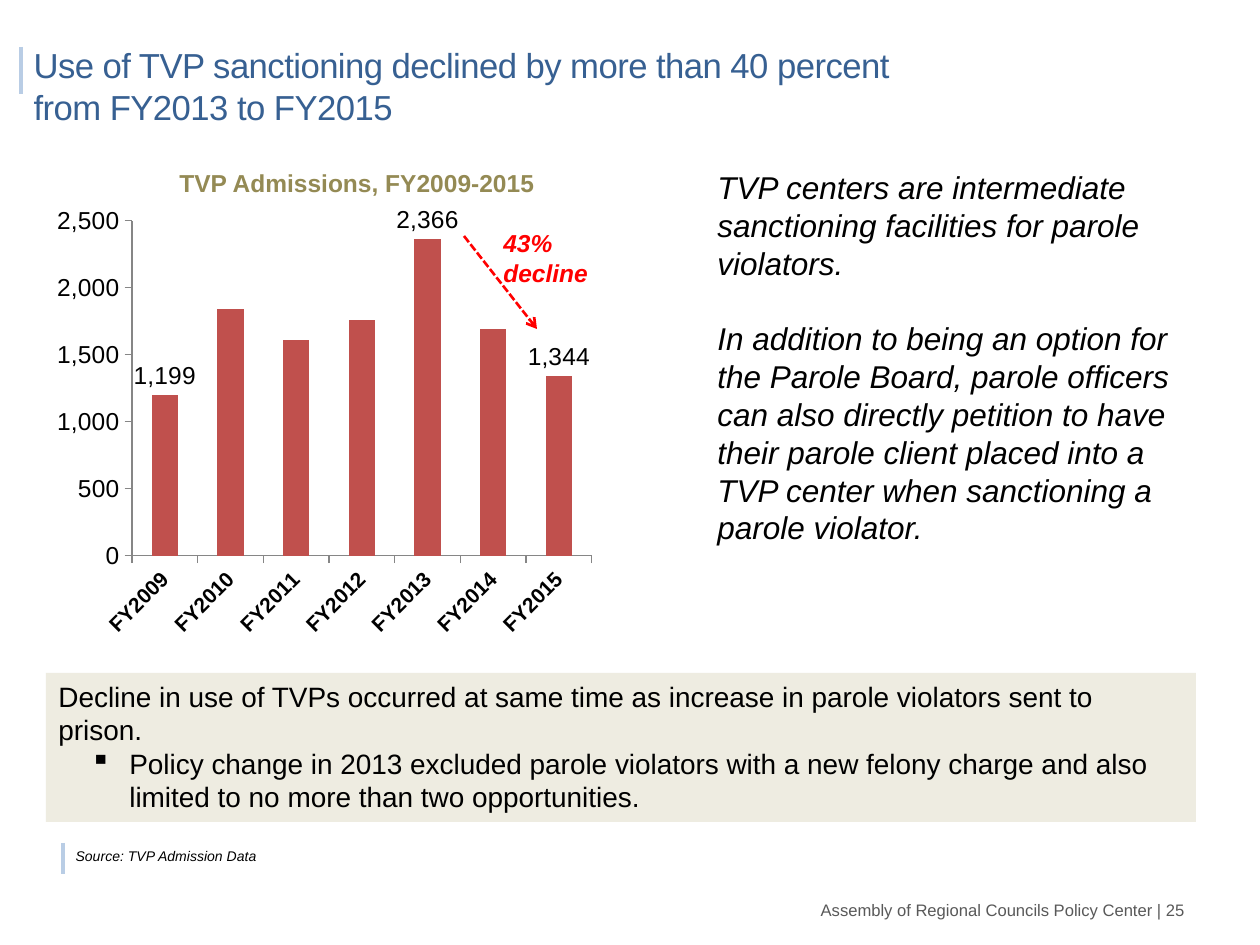
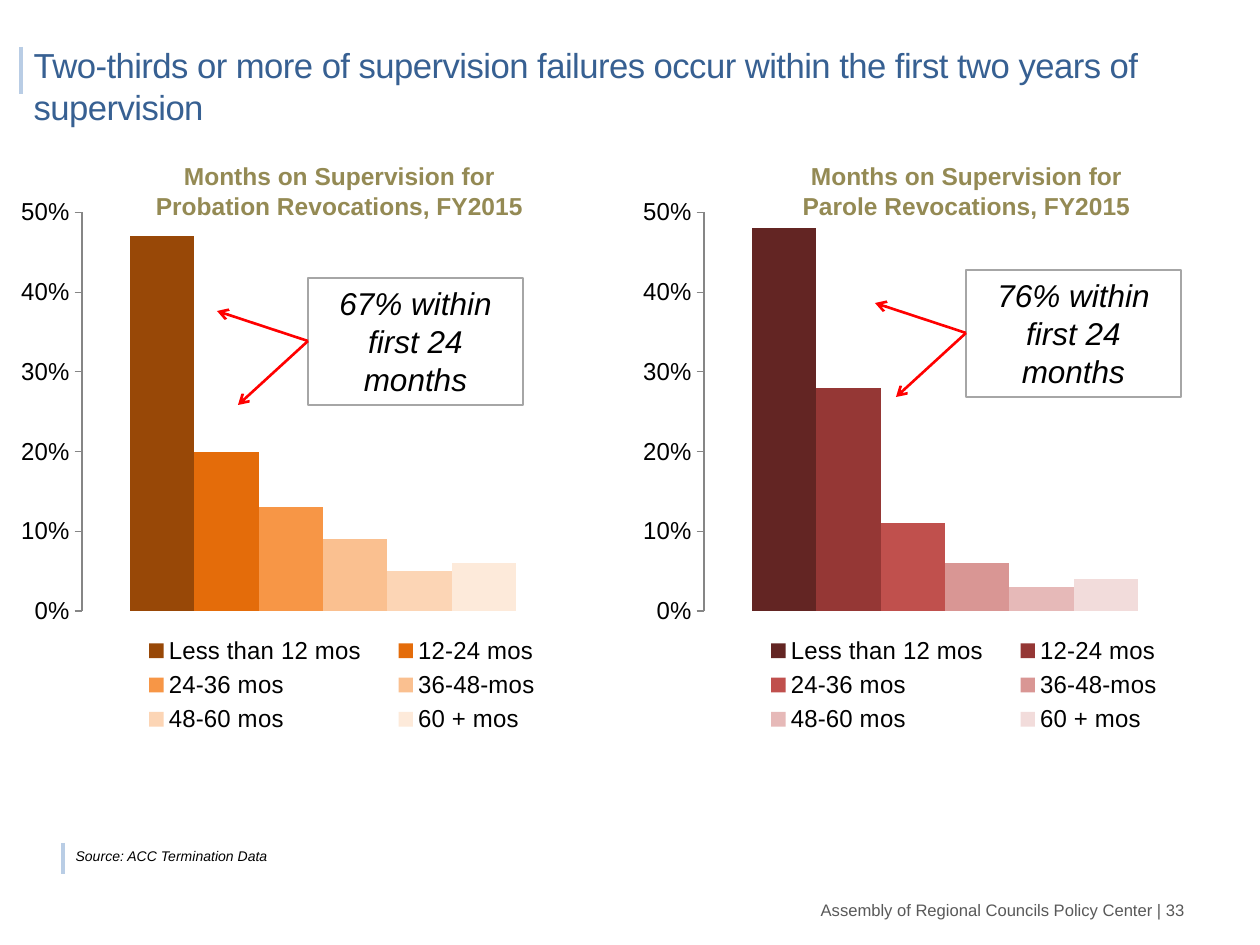
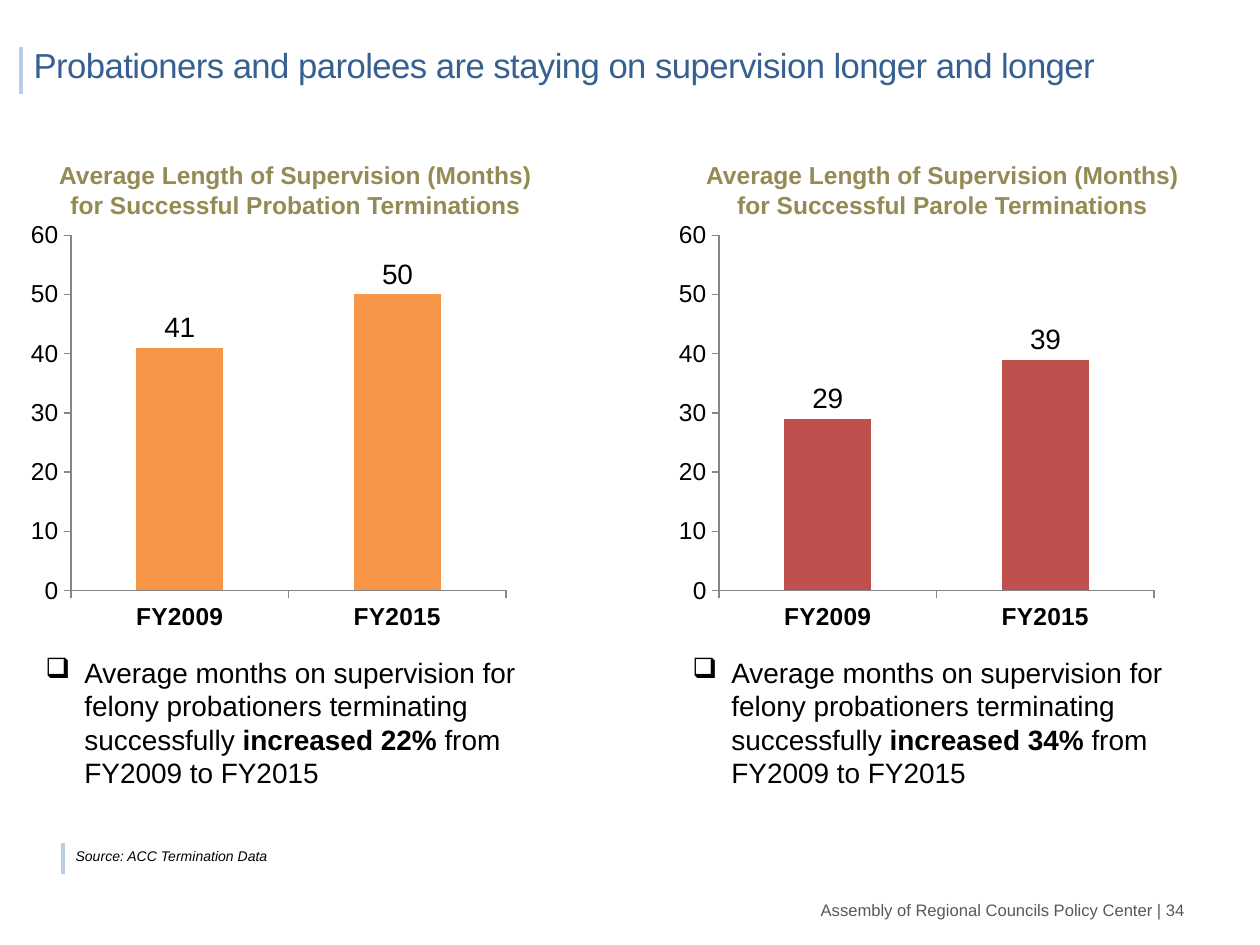
from dataclasses import dataclass

from lxml import etree
from pptx import Presentation
from pptx.chart.data import CategoryChartData
from pptx.dml.color import RGBColor
from pptx.enum.chart import XL_CHART_TYPE, XL_LABEL_POSITION, XL_LEGEND_POSITION, XL_TICK_MARK
from pptx.enum.dml import MSO_LINE
from pptx.enum.shapes import MSO_CONNECTOR, MSO_SHAPE
from pptx.enum.text import MSO_ANCHOR, MSO_AUTO_SIZE, PP_ALIGN
from pptx.oxml.ns import qn
from pptx.util import Emu, Pt

PX = 914400 / 126
COLUMN = XL_CHART_TYPE.COLUMN_CLUSTERED
OUTSIDE_END = XL_LABEL_POSITION.OUTSIDE_END
OUTSIDE = XL_TICK_MARK.OUTSIDE
LEGEND_BOTTOM = XL_LEGEND_POSITION.BOTTOM
SHORT_DASH = MSO_LINE.SQUARE_DOT
STRAIGHT = MSO_CONNECTOR.STRAIGHT
RECTANGLE = MSO_SHAPE.RECTANGLE
TOP, BOTTOM = MSO_ANCHOR.TOP, MSO_ANCHOR.BOTTOM
NO_FIT = MSO_AUTO_SIZE.NONE
LEFT, CENTER, RIGHT = PP_ALIGN.LEFT, PP_ALIGN.CENTER, PP_ALIGN.RIGHT


@dataclass(frozen=True)
class Theme:
    """Colours, font and type sizes shared by every slide."""
    font: str = "Arial"
    title: str = "376092"
    heading: str = "948A54"
    text: str = "000000"
    footer: str = "595959"
    rail: str = "B9CDE5"
    accent: str = "FF0000"
    panel: str = "EEECE1"
    border: str = "A6A6A6"
    axis: str = "868686"
    probation: str = "F79646"
    parole: str = "C0504D"
    probation_shades: tuple = ("984807", "E46C0A", "F79646", "FAC090", "FCD5B5", "FDEADA")
    parole_shades: tuple = ("632523", "953735", "C0504D", "D99694", "E6B9B8", "F2DCDB")
    title_size: float = 19.8
    lead_size: int = 18
    body_size: int = 16
    label_size: int = 14
    small_label_size: int = 12
    footer_size: float = 9.5
    source_size: int = 8


THEME = Theme()
DURATIONS = ("Less than 12 mos", "12-24 mos", "24-36 mos", "36-48-mos", "48-60 mos", "60 + mos")


def px(length):
    """Turn pixels into EMU."""
    return Emu(round(length * PX))


def box(left, top, width, height):
    """Turn a pixel box into EMU."""
    return [px(length) for length in (left, top, width, height)]


def rgb(code):
    """Turn a hex code into a colour."""
    return RGBColor.from_string(code)


def style(font, size, color=THEME.text, bold=None, italic=None):
    """Format a font in the theme typeface."""
    font.name = THEME.font
    font.size = Pt(size)
    font.color.rgb = rgb(color)
    font.bold = bold
    font.italic = italic


def write(shape, paragraphs, size, color=THEME.text, bold=None, italic=None,
          align=LEFT, anchor=TOP, gap=0):
    """Fill a shape with uniformly styled paragraphs."""
    frame = shape.text_frame
    frame.word_wrap = True
    frame.auto_size = NO_FIT
    frame.vertical_anchor = anchor
    for index, text in enumerate(paragraphs):
        paragraph = frame.add_paragraph() if index else frame.paragraphs[0]
        paragraph.text = text
        paragraph.alignment = align
        if index and gap:
            paragraph.space_before = Pt(gap)
        style(paragraph.font, size, color, bold, italic)
    return frame.paragraphs


def set_bullet(paragraph, symbol=None, margin=0, hanging=0):
    """Give a paragraph a bullet and a hanging indent, or neither."""
    properties = paragraph._p.get_or_add_pPr()
    properties.set("marL", str(px(margin)))
    properties.set("indent", str(-px(hanging)))
    if symbol:
        bullet = etree.Element(qn("a:buChar"), char=symbol)
    else:
        bullet = etree.Element(qn("a:buNone"))
    defaults = properties.find(qn("a:defRPr"))
    if defaults is None:
        properties.append(bullet)
    else:
        defaults.addprevious(bullet)


def add_text(slide, place, paragraphs, size, **look):
    """Add a wrapped text box."""
    return write(slide.shapes.add_textbox(*box(*place)), paragraphs, size, **look)


def add_heading(slide, place, *lines):
    """Add the heading above a chart."""
    add_text(slide, place, lines, THEME.label_size, color=THEME.heading, bold=True, align=CENTER)


def add_panel(slide, place, fill=None, border=None):
    """Add a flat rectangle."""
    panel = slide.shapes.add_shape(RECTANGLE, *box(*place))
    panel.shadow.inherit = False
    if fill:
        panel.fill.solid()
        panel.fill.fore_color.rgb = rgb(fill)
    else:
        panel.fill.background()
    if border:
        panel.line.color.rgb = rgb(border)
        panel.line.width = Pt(0.75)
    else:
        panel.line.fill.background()
    return panel


def add_line(slide, start, end, color, width):
    """Add a straight line without a shadow."""
    line = slide.shapes.add_connector(STRAIGHT, *box(*start, *end))
    line.line.color.rgb = rgb(color)
    line.line.width = Pt(width)
    etree.SubElement(line.element.spPr, qn("a:effectLst"))
    return line


def add_arrow(slide, start, end, dash=None):
    """Add an accent arrow."""
    arrow = add_line(slide, start, end, THEME.accent, 1.5)
    if dash:
        arrow.line.dash_style = dash
    etree.SubElement(arrow.line._get_or_add_ln(), qn("a:tailEnd"), type="arrow")


def add_rails(slide):
    """Put the title and source rails on the layout."""
    for x, top, bottom in ((21, 47, 94), (63, 843, 874)):
        rail = add_line(slide, (x, top), (x, bottom), THEME.rail, 2)
        slide.slide_layout.shapes.element.append(rail.element)


def add_slide(deck, title, source, number):
    """Add a slide with its title, source and footer."""
    slide = deck.slides.add_slide(deck.slide_layouts[1])
    heading, note = slide.placeholders
    heading.left, heading.top, heading.width, heading.height = box(21, 38, 1176, 94)
    for paragraph in write(heading, [title], THEME.title_size, THEME.title):
        for run in paragraph.runs:
            run.font._element.set("spc", "-30")
    note.left, note.top, note.width, note.height = box(63, 841, 643, 30)
    set_bullet(write(note, [f"Source: {source}"], THEME.source_size, italic=True)[0])
    add_text(slide, (789, 876, 408, 50),
             [f"Assembly of Regional Councils Policy Center | {number}"],
             THEME.footer_size, color=THEME.footer, align=RIGHT, anchor=BOTTOM)
    return slide


def set_layout(parent, index, mode, **fractions):
    """Place a chart part by fractions of the chart area."""
    for old in parent.findall(qn("c:layout")):
        parent.remove(old)
    layout = etree.Element(qn("c:layout"))
    manual = etree.SubElement(layout, qn("c:manualLayout"))
    if mode:
        etree.SubElement(manual, qn("c:layoutTarget"), val=mode)
    for side in ("xMode", "yMode"):
        etree.SubElement(manual, qn(f"c:{side}"), val="edge")
    for key, value in fractions.items():
        etree.SubElement(manual, qn(f"c:{key}"), val=str(value))
    parent.insert(index, layout)


def add_columns(slide, place, categories, series, colors, number_format, top, step):
    """Add a column chart with a plain value axis."""
    data = CategoryChartData(number_format=number_format)
    data.categories = categories
    for name, values in series:
        data.add_series(name, values)
    chart = slide.shapes.add_chart(COLUMN, *box(*place), data).chart
    style(chart.font, THEME.lead_size)
    chart.has_title = False
    chart.has_legend = False
    plot = chart.plots[0]
    plot.vary_by_categories = False
    plot.gap_width = 150
    plot.overlap = 0
    for columns, color in zip(plot.series, colors):
        columns.format.fill.solid()
        columns.format.fill.fore_color.rgb = rgb(color)
    axis = chart.value_axis
    axis.has_major_gridlines = False
    axis.minimum_scale, axis.maximum_scale, axis.major_unit = 0, top, step
    axis.tick_labels.number_format = number_format
    axis.tick_labels.number_format_is_linked = False
    style(axis.tick_labels.font, THEME.label_size)
    for each in (axis, chart.category_axis):
        each.major_tick_mark = OUTSIDE
        each.format.line.color.rgb = rgb(THEME.axis)
    return chart


def add_year_chart(slide, place, values, color, number_format, top, step, year_size,
                   value_size, labelled=None):
    """Add one series by fiscal year, labelling all columns or chosen ones."""
    chart = add_columns(slide, place, list(values), [("Series 1", list(values.values()))],
                        [color], number_format, top, step)
    style(chart.category_axis.tick_labels.font, year_size, bold=True)
    columns = chart.plots[0].series[0]
    labels = columns.data_labels
    labels.show_value = labelled is None
    labels.number_format = number_format
    labels.number_format_is_linked = False
    labels.position = OUTSIDE_END
    style(labels.font, value_size)
    for index, year in enumerate(values):
        if labelled and year in labelled:
            label = columns.points[index].data_label
            style(label.font, value_size)
            label.position = OUTSIDE_END
    return chart


def add_duration_chart(slide, place, shares, shades):
    """Add the shares of revocations by months on supervision."""
    series = [(name, [share]) for name, share in zip(DURATIONS, shares)]
    chart = add_columns(slide, place, ["1"], series, shades, "0%", 0.5, 0.1)
    chart.category_axis.visible = False
    chart.has_legend = True
    legend = chart.legend
    legend.position = LEGEND_BOTTOM
    legend.include_in_layout = False
    style(legend.font, THEME.label_size)
    set_layout(chart.element.chart.plotArea, 0, "inner", x=0.09, y=0.08, w=0.89, h=0.62)
    set_layout(legend._element, 1, None, x=0.16, y=0.73, w=0.82, h=0.17)


def add_callout(slide, left, top, text):
    """Add a boxed remark with two arrows to the first two columns."""
    callout = add_panel(slide, (left, top, 215, 127), border=THEME.border)
    write(callout, [text], THEME.lead_size, italic=True, align=CENTER)
    start = (left, top + 63)
    for dx, dy in ((-91, -30), (-70, 64)):
        add_arrow(slide, start, (start[0] + dx, start[1] + dy))


def add_finding(slide, place, change):
    """Add the bulleted finding with its change in bold."""
    paragraph = add_text(slide, place, [""], THEME.body_size)[0]
    pieces = ("Average months on supervision for felony probationers terminating successfully ",
              change, " from FY2009 to FY2015")
    for piece in pieces:
        run = paragraph.add_run()
        run.text = piece
        if piece == change:
            run.font.bold = True
    set_bullet(paragraph, "❑", 39, 39)


def build_sanctioning(deck):
    """Build the slide on TVP admissions."""
    slide = add_slide(deck, "Use of TVP sanctioning declined by more than 40 percent\v"
                      "from FY2013 to FY2015", "TVP Admission Data", 25)
    add_rails(slide)
    admissions = {"FY2009": 1199, "FY2010": 1843, "FY2011": 1606, "FY2012": 1760,
                  "FY2013": 2366, "FY2014": 1695, "FY2015": 1344}
    chart = add_year_chart(slide, (46, 198, 557, 447), admissions, THEME.parole, "#,##0", 2500, 500,
                           THEME.small_label_size, THEME.label_size,
                           ("FY2009", "FY2013", "FY2015"))
    chart.category_axis._element.txPr.bodyPr.set("rot", "-2700000")
    add_heading(slide, (155, 162, 404, 43), "TVP Admissions, FY2009-2015")
    add_arrow(slide, (464, 236), (537, 329), SHORT_DASH)
    add_text(slide, (491, 222, 125, 72), ["43% decline"], THEME.label_size,
             color=THEME.accent, bold=True, italic=True)
    panel = add_panel(slide, (46, 673, 1150, 149), fill=THEME.panel)
    remarks = write(panel, [
        "Decline in use of TVPs occurred at same time as increase in parole violators sent to prison.",
        "Policy change in 2013 excluded parole violators with a new felony charge and also "
        "limited to no more than two opportunities."], THEME.body_size)
    set_bullet(remarks[1], "▪", 71, 39)
    add_text(slide, (705, 162, 504, 394), [
        "TVP centers are intermediate sanctioning facilities for parole violators.",
        "In addition to being an option for the Parole Board, parole officers can also directly "
        "petition to have their parole client placed into a TVP center when sanctioning a "
        "parole violator."], THEME.lead_size, italic=True, gap=21.6)


def build_failures(deck):
    """Build the slide on when supervision fails."""
    slide = add_slide(deck, "Two-thirds or more of supervision failures occur within the first "
                      "two years of supervision", "ACC Termination Data", 33)
    groups = (
        (21, 89, "Probation", (0.47, 0.2, 0.13, 0.09, 0.05, 0.06), THEME.probation_shades,
         (308, 278), "67%"),
        (643, 716, "Parole", (0.48, 0.28, 0.11, 0.06, 0.03, 0.04), THEME.parole_shades,
         (966, 270), "76%"))
    for chart_left, heading_left, group, shares, shades, corner, share in groups:
        add_duration_chart(slide, (chart_left, 161, 554, 643), shares, shades)
        add_heading(slide, (heading_left, 155, 501, 72), "Months on Supervision for",
                    f"{group} Revocations, FY2015")
        add_callout(slide, *corner, f"{share} within first 24 months")


def build_lengths(deck):
    """Build the slide on the length of supervision."""
    slide = add_slide(deck, "Probationers and parolees are staying on supervision longer and longer",
                      "ACC Termination Data", 34)
    groups = (
        (21, 33, "Probation", {"FY2009": 41, "FY2015": 50}, THEME.probation, "22%"),
        (669, 680, "Parole", {"FY2009": 29, "FY2015": 39}, THEME.parole, "34%"))
    for chart_left, text_left, group, months, color, change in groups:
        add_year_chart(slide, (chart_left, 213, 495, 426), months, color, "#,##0", 60, 10,
                       THEME.label_size, THEME.body_size)
        add_heading(slide, (text_left, 154, 525, 72), "Average Length of Supervision (Months) "
                    f"for Successful {group} Terminations")
        add_finding(slide, (text_left, 649, 525, 149), f"increased {change}")


def main():
    """Build and save the deck."""
    deck = Presentation()
    deck.slide_width, deck.slide_height = px(1260), px(945)
    build_sanctioning(deck)
    build_failures(deck)
    build_lengths(deck)
    deck.save("out.pptx")


if __name__ == "__main__":
    main()
